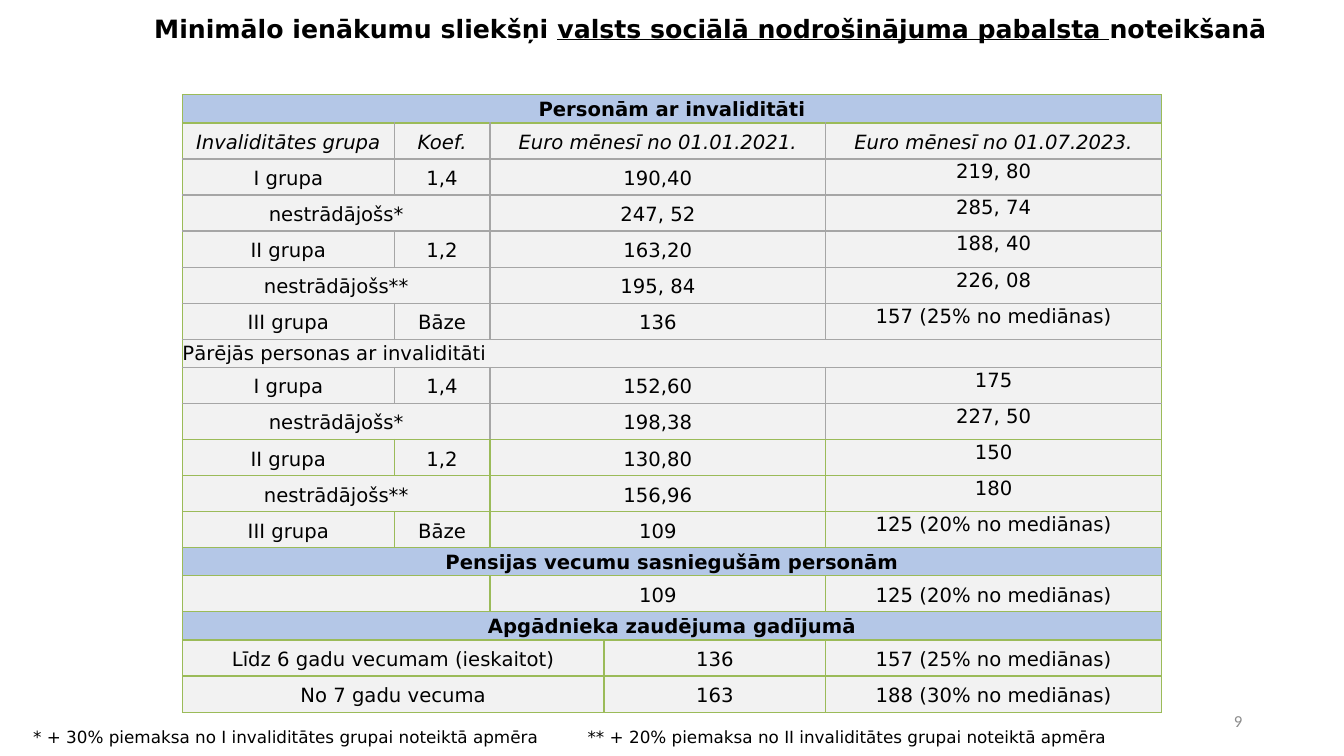
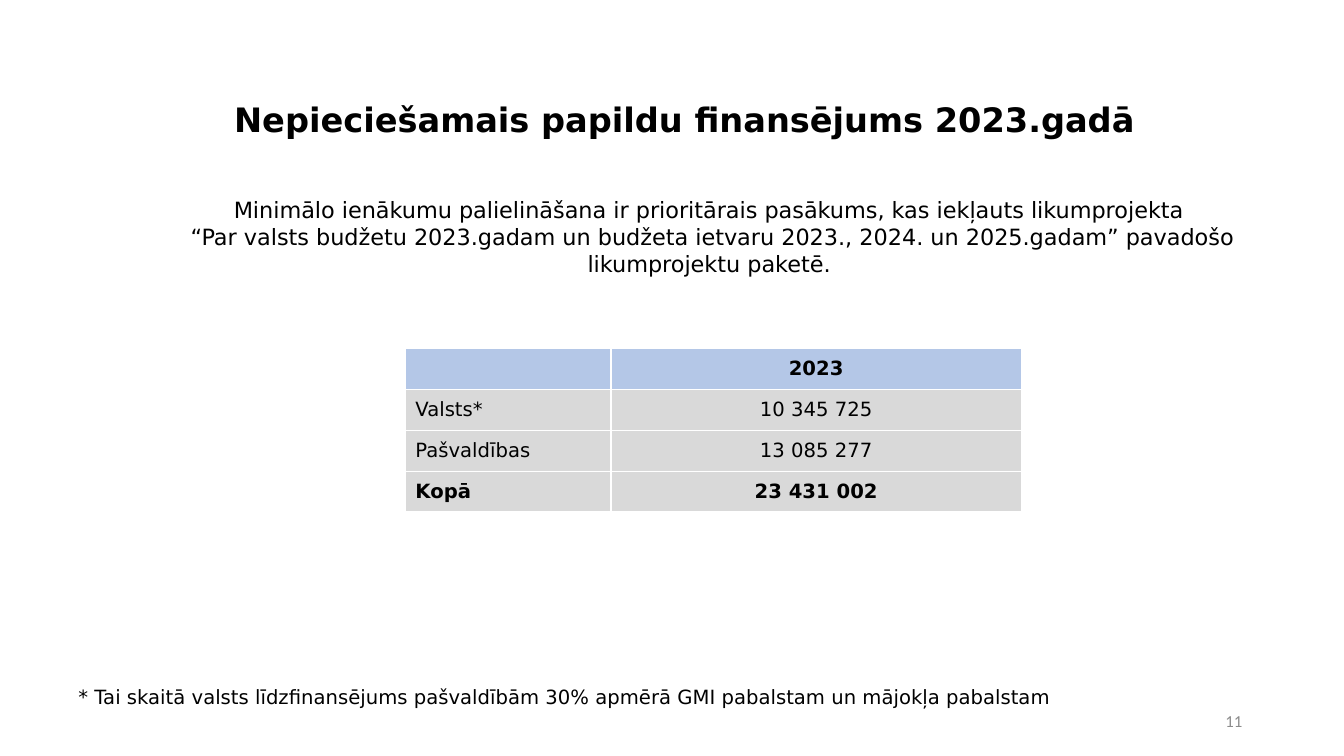
from itertools import product

from lxml import etree
from pptx import Presentation
from pptx import util as u
from pptx.dml.color import RGBColor
from pptx.enum import text
from pptx.oxml.ns import qn

CELL = 0.1  # inches in one grid column or row
BLACK = RGBColor(0x00, 0x00, 0x00)
WHITE = RGBColor(0xFF, 0xFF, 0xFF)
BAND_BLUE = RGBColor(0xB4, 0xC7, 0xE7)
PALE_GREY = RGBColor(0xF2, 0xF2, 0xF2)
MID_GREY = RGBColor(0xD9, 0xD9, 0xD9)
LINE_GREY = RGBColor(0xA6, 0xA6, 0xA6)
LINE_GREEN = RGBColor(0x9B, 0xBB, 0x59)
NUMBER_GREY = RGBColor(0x8C, 0x8C, 0x8C)
FONT = "DejaVu Sans"
LEFT, CENTER, RIGHT = text.PP_ALIGN.LEFT, text.PP_ALIGN.CENTER, text.PP_ALIGN.RIGHT
TOP, MIDDLE = text.MSO_ANCHOR.TOP, text.MSO_ANCHOR.MIDDLE

NUMBER_BOX = (94.2, 69.5, 30, 4)

# Column spans of each kind of row in the thresholds table
BAND, GROUP, PAIR, SURVIVOR = (5,), (1, 1, 2, 1), (2, 2, 1), (3, 1, 1)
THRESHOLDS = [
    (BAND, ["Personām ar invaliditāti"]),
    (GROUP, ["Invaliditātes grupa", "Koef.", "Euro mēnesī no 01.01.2021.", "Euro mēnesī no 01.07.2023."]),
    (GROUP, ["I grupa", "1,4", "190,40", "219, 80"]),
    (PAIR, ["nestrādājošs*", "247, 52", "285, 74"]),
    (GROUP, ["II grupa", "1,2", "163,20", "188, 40"]),
    (PAIR, ["nestrādājošs**", "195, 84", "226, 08"]),
    (GROUP, ["III grupa", "Bāze", "136", "157 (25% no mediānas)"]),
    (BAND, ["Pārējās personas ar invaliditāti"]),
    (GROUP, ["I grupa", "1,4", "152,60", "175"]),
    (PAIR, ["nestrādājošs*", "198,38", "227, 50"]),
    (GROUP, ["II grupa", "1,2", "130,80", "150"]),
    (PAIR, ["nestrādājošs**", "156,96", "180"]),
    (GROUP, ["III grupa", "Bāze", "109", "125 (20% no mediānas)"]),
    (BAND, ["Pensijas vecumu sasniegušām personām"]),
    (PAIR, ["", "109", "125 (20% no mediānas)"]),
    (BAND, ["Apgādnieka zaudējuma gadījumā"]),
    (SURVIVOR, ["Līdz 6 gadu vecumam (ieskaitot)", "136", "157 (25% no mediānas)"]),
    (SURVIVOR, ["No 7 gadu vecuma", "163", "188 (30% no mediānas)"]),
]
HEADING_ROW, OTHERS_ROW = 1, 7
GREY_RULED = range(1, 10)
RAISED = range(2, 13)  # rows whose last figure sits at the top of its cell

FUNDING = [("", "2023"), ("Valsts*", "10 345 725"),
           ("Pašvaldības", "13 085 277"), ("Kopā", "23 431 002")]


def grid(cells):
    return u.Inches(cells * CELL)


def add_span(para, words, size, bold=False, italic=False, underline=False, color=BLACK, font=FONT):
    span = para.add_run()
    span.text = words
    span.font.name, span.font.size = font, u.Pt(size)
    span.font.bold, span.font.italic, span.font.underline = bold, italic, underline
    span.font.color.rgb = color


def add_text(page, box, paragraphs, size, align=LEFT, anchor=TOP, **style):
    """Each paragraph is a list of (words, underlined) spans."""
    frame = page.shapes.add_textbox(*map(grid, box)).text_frame
    frame.word_wrap = True
    frame.vertical_anchor = anchor
    for index, spans in enumerate(paragraphs):
        para = frame.add_paragraph() if index else frame.paragraphs[0]
        para.alignment = align
        for words, underline in spans:
            add_span(para, words, size, underline=underline, **style)


def add_title(page, box, spans, size, anchor=TOP):
    add_text(page, box, [spans], size, CENTER, anchor, bold=True)


def add_number(page, number):
    add_text(page, NUMBER_BOX, [[(number, False)]], 12, RIGHT, MIDDLE,
             color=NUMBER_GREY, font="Calibri")


def add_grid_table(page, box, widths, heights):
    table = page.shapes.add_table(len(heights), len(widths), *map(grid, box)).table
    for column, width in zip(table.columns, widths):
        column.width = grid(width)
    for row, height in zip(table.rows, heights):
        row.height = grid(height)
    return table


def set_borders(cell, left, right, top, bottom):
    properties = cell._tc.get_or_add_tcPr()
    for index, (side, color) in enumerate(zip("LRTB", (left, right, top, bottom))):
        line = etree.Element(qn(f"a:ln{side}"), w=str(u.Pt(1)))
        fill = etree.SubElement(line, qn("a:solidFill"))
        etree.SubElement(fill, qn("a:srgbClr"), val=str(color))
        properties.insert(index, line)


def fill_cell(cell, words, fill, align=CENTER, anchor=MIDDLE, margins=(0, 0), spacing=1.0, **style):
    cell.fill.solid()
    cell.fill.fore_color.rgb = fill
    cell.vertical_anchor = anchor
    cell.margin_left = cell.margin_right = grid(margins[0])
    cell.margin_top = cell.margin_bottom = grid(margins[1])
    if words:
        para = cell.text_frame.paragraphs[0]
        para.alignment, para.line_spacing = align, spacing
        add_span(para, words, 14, **style)


def thresholds_cell(cell, row, is_last, is_band, words):
    if is_band:
        others = row == OTHERS_ROW
        fill_cell(cell, words, PALE_GREY if others else BAND_BLUE, LEFT if others else CENTER,
                  TOP, spacing=1.15, bold=not others)
    elif is_last and row in RAISED:
        fill_cell(cell, words, PALE_GREY, anchor=TOP, spacing=1.07)
    else:
        fill_cell(cell, words, PALE_GREY, margins=(0.8, 0.4) if words else (0, 0),
                  spacing=1.15, italic=row == HEADING_ROW)


def thresholds_table(page, box):
    widths = (21, 9.5, 11.3, 22, 33.3)
    band_height = 2.8
    bands = sum(spans == BAND for spans, _ in THRESHOLDS)
    row_height = (box[3] - bands * band_height) / (len(THRESHOLDS) - bands)
    heights = [band_height if spans == BAND else row_height for spans, _ in THRESHOLDS]
    table = add_grid_table(page, box, widths, heights)
    for row, (spans, texts) in enumerate(THRESHOLDS):
        inner = LINE_GREY if row in GREY_RULED else LINE_GREEN
        top = LINE_GREEN if row == GREY_RULED[0] else inner
        bottom = LINE_GREEN if row == GREY_RULED[-1] else inner
        start = 0
        for width, words in zip(spans, texts):
            end = start + width
            cell = table.cell(row, start)
            if width > 1:
                cell.merge(table.cell(row, end - 1))
            thresholds_cell(cell, row, end == len(widths), spans == BAND, words)
            left = inner if start else LINE_GREEN
            right = inner if end < len(widths) else LINE_GREEN
            for column in range(start, end):
                set_borders(table.cell(row, column), left, right, top, bottom)
            start = end


def funding_table(page, box):
    table = add_grid_table(page, box, (20.4, 40.7), [box[3] / len(FUNDING)] * len(FUNDING))
    for row, column in product(range(len(FUNDING)), range(2)):
        cell = table.cell(row, column)
        fill_cell(cell, FUNDING[row][column], MID_GREY if row else BAND_BLUE,
                  CENTER if column else LEFT, margins=(0 if column else 1, 0),
                  bold=row in (0, len(FUNDING) - 1))
        set_borders(cell, *[WHITE] * 4)


def thresholds_slide(page):
    add_title(page, (7.6, 0.8, 125.7, 6.4), [
        ("Minimālo ienākumu sliekšņi ", False),
        ("valsts sociālā nodrošinājuma pabalsta ", True),
        ("noteikšanā", False)], 18)
    thresholds_table(page, (18.1, 9.4, 97.1, 61.3))
    add_text(page, (2.3, 71.6, 128.7, 3), [[(
        "* + 30% piemaksa no I invaliditātes grupai noteiktā apmēra \t"
        "** + 20% piemaksa no II invaliditātes grupai noteiktā apmēra", False)]], 12)
    add_number(page, "9")


def funding_slide(page):
    add_title(page, (7.6, 7.6, 120.6, 8.5),
              [("Nepieciešamais papildu finansējums 2023.gadā", False)], 24, MIDDLE)
    add_text(page, (14.4, 19, 112.6, 9.1), [
        [("Minimālo ienākumu palielināšana ir prioritārais pasākums, kas iekļauts likumprojekta ", False)],
        [("“Par valsts budžetu 2023.gadam un budžeta ietvaru 2023., 2024. un 2025.gadam” "
          "pavadošo likumprojektu paketē. ", False)]], 16, CENTER)
    funding_table(page, (40.2, 34.6, 61.1, 16.2))
    add_text(page, (6.8, 67.5, 120.6, 3.4), [[(
        "* Tai skaitā valsts līdzfinansējums pašvaldībām 30% apmērā "
        "GMI pabalstam un mājokļa pabalstam", False)]], 14)
    add_number(page, "11")


def main():
    deck = Presentation()
    deck.slide_width, deck.slide_height = u.Inches(13.33), u.Inches(7.5)
    for build in (thresholds_slide, funding_slide):
        build(deck.slides.add_slide(deck.slide_layouts[6]))
    deck.save("out.pptx")


if __name__ == "__main__":
    main()
